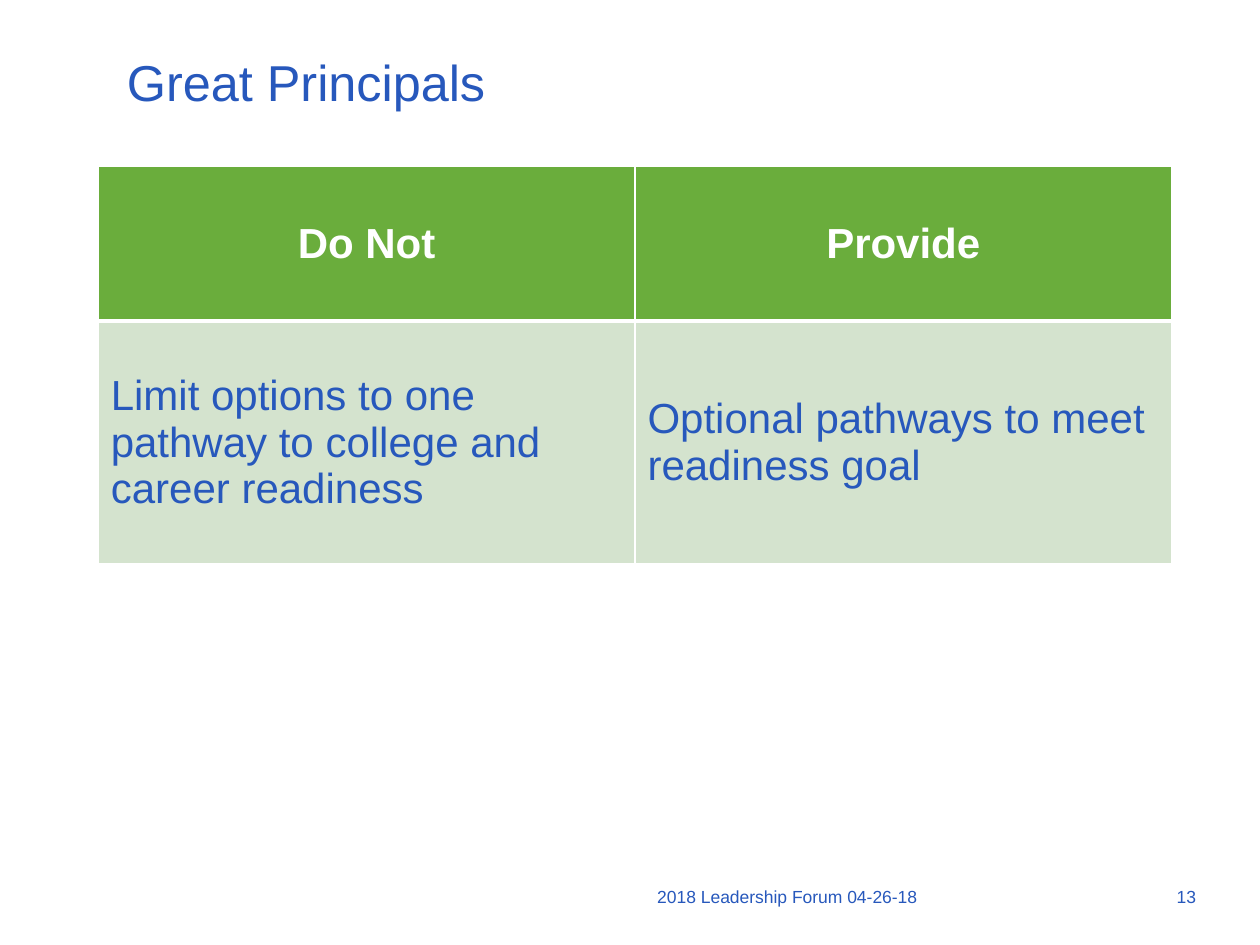
import pptx
import pptx.dml.color
import pptx.enum.text
import pptx.oxml
import pptx.oxml.ns
import pptx.util
from dataclasses import dataclass

Cm = pptx.util.Cm
Anchor = pptx.enum.text.MSO_ANCHOR
Align = pptx.enum.text.PP_ALIGN


@dataclass(frozen=True)
class Theme:
    font: str = "Arial"
    blue: str = "2758BC"
    white: str = "FFFFFF"
    green: str = "6AAD3C"
    pale_green: str = "D4E3CE"
    title_size: float = 28.8
    table_size: float = 24
    footer_size: float = 10
    thin_border: float = 1
    thick_border: float = 3


THEME = Theme()

# Content: text, (left, top, width, height) in cm, size, anchor
TEXTS = [
    ("Great Principals", (2.31, 0.86, 21.36, 1.57), THEME.title_size, Anchor.MIDDLE),
    ("2018 Leadership Forum 04-26-18", (13, 17.73, 10.49, 1.14), THEME.footer_size, Anchor.TOP),
    ("13", (23.47, 17.73, 1.45, 1.14), THEME.footer_size, Anchor.TOP),
]
ROWS = [
    ("Do Not", "Provide"),
    ("Limit options to one pathway to college and career readiness",
     "Optional pathways to meet readiness goal"),
]
TABLE_LEFT, TABLE_TOP = 1.98, 3.35
COLUMN_WIDTH = 10.82
ROW_HEIGHTS = (3.12, 4.9)


def rgb(color):
    return pptx.dml.color.RGBColor.from_string(color)


def write(frame, text, size, color, bold=False, align=Align.LEFT):
    frame.text = text
    para = frame.paragraphs[0]
    para.alignment = align
    for span in para.runs:
        span.font.name = THEME.font
        span.font.size = pptx.util.Pt(size)
        span.font.bold = bold
        span.font.color.rgb = rgb(color)


def set_borders(cell, bottom_width):
    properties = cell._tc.get_or_add_tcPr()
    for index, side in enumerate("LRTB"):
        points = bottom_width if side == "B" else THEME.thin_border
        line = pptx.oxml.parse_xml(
            f'<a:ln{side} {pptx.oxml.ns.nsdecls("a")} w="{pptx.util.Pt(points)}">'
            f'<a:solidFill><a:srgbClr val="{THEME.white}"/></a:solidFill></a:ln{side}>')
        properties.insert(index, line)


def add_text(page, text, place, size, anchor):
    box = page.shapes.add_textbox(*map(Cm, place))
    box.text_frame.word_wrap = True
    box.text_frame.vertical_anchor = anchor
    write(box.text_frame, text, size, THEME.blue)


def add_comparison(page):
    columns = len(ROWS[0])
    table = page.shapes.add_table(
        len(ROWS), columns, Cm(TABLE_LEFT), Cm(TABLE_TOP),
        Cm(COLUMN_WIDTH * columns), Cm(sum(ROW_HEIGHTS))).table
    for column in table.columns:
        column.width = Cm(COLUMN_WIDTH)
    for number, (texts, height) in enumerate(zip(ROWS, ROW_HEIGHTS)):
        header = number == 0
        table.rows[number].height = Cm(height)
        for cell, text in zip(table.rows[number].cells, texts):
            cell.vertical_anchor = Anchor.MIDDLE
            cell.fill.solid()
            cell.fill.fore_color.rgb = rgb(THEME.green if header else THEME.pale_green)
            set_borders(cell, THEME.thick_border if header else THEME.thin_border)
            # The row under the header shares its thick edge
            if not header:
                top = cell._tc.tcPr.find(pptx.oxml.ns.qn("a:lnT"))
                top.set("w", str(pptx.util.Pt(THEME.thick_border)))
            write(cell.text_frame, text, THEME.table_size,
                  THEME.white if header else THEME.blue, header,
                  Align.CENTER if header else Align.LEFT)


def main():
    deck = pptx.Presentation()
    deck.slide_width, deck.slide_height = Cm(25.4), Cm(19.05)
    page = deck.slides.add_slide(deck.slide_layouts[6])

    # Title, footer and page number
    for item in TEXTS:
        add_text(page, *item)

    # Two-column comparison
    add_comparison(page)
    deck.save("out.pptx")


if __name__ == "__main__":
    main()
